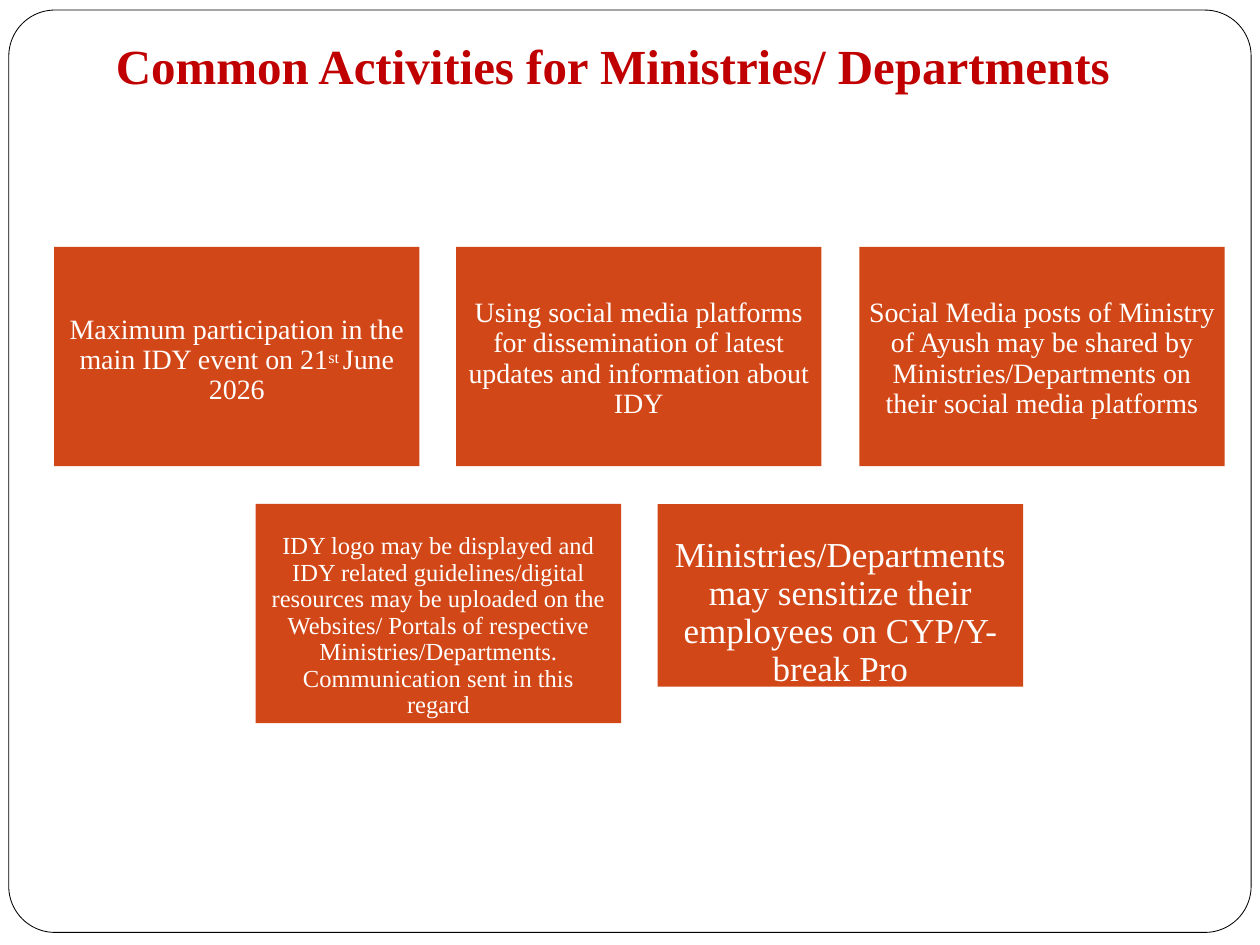
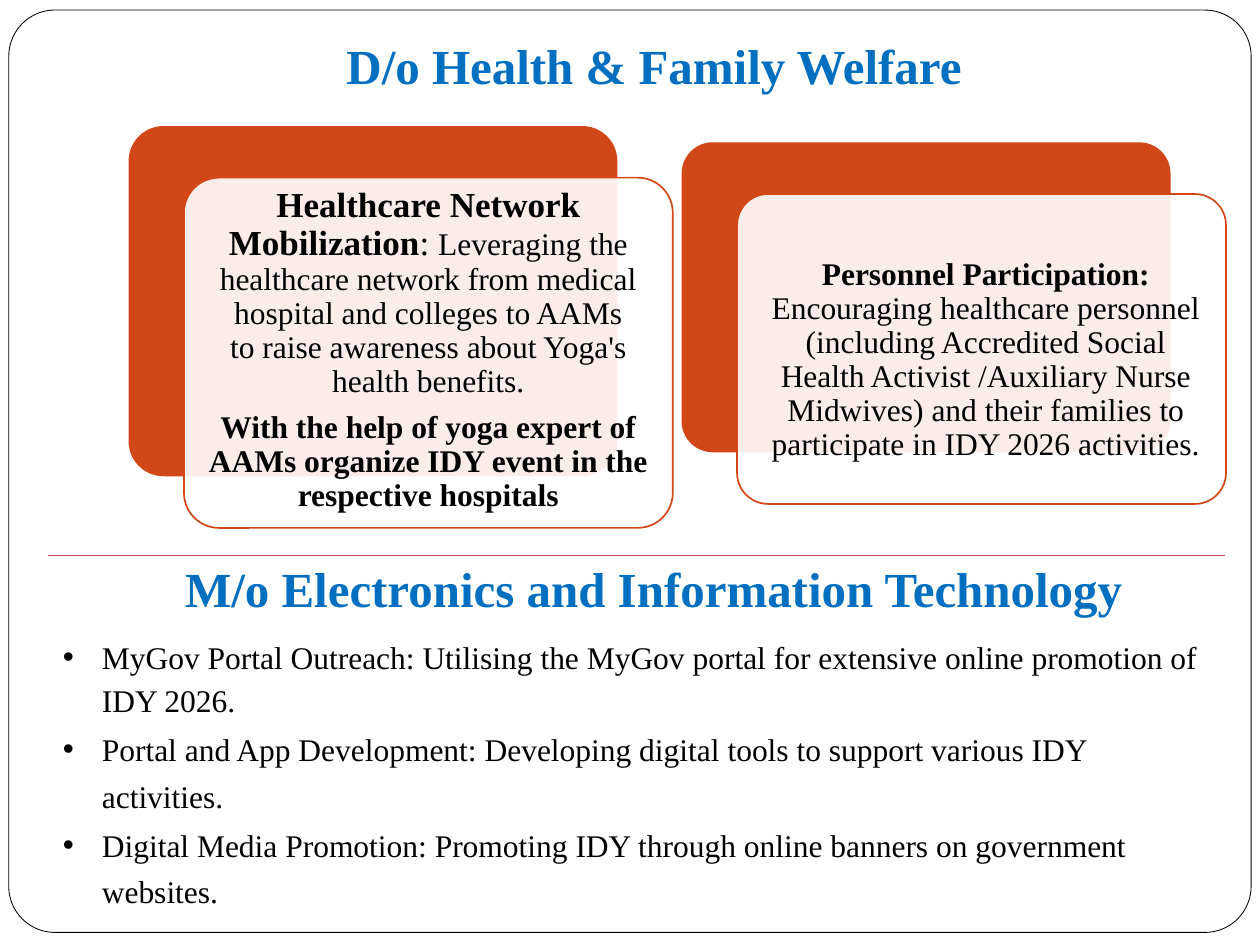
from lxml import etree
from pptx import Presentation
from pptx import util as u
from pptx.dml.color import RGBColor
from pptx.enum import shapes, text
from pptx.oxml.ns import qn

EMU_PER_PX = 9144  # 100 px to the inch
FONT = "Times New Roman"
COLORS = {
    "frame": "000000",
    "body": "000000",
    "white": "FFFFFF",
    "card": "D24717",
    "common": "C00000",
    "ministry": "006FC0",
    "divider": "BF4C48",
}
SHAPE = shapes.MSO_SHAPE
CENTER = text.PP_ALIGN.CENTER
MIDDLE = text.MSO_ANCHOR.MIDDLE


def px(*lengths):
    return [u.Emu(length * EMU_PER_PX) for length in lengths]


def color(name):
    return RGBColor.from_string(COLORS[name])


def write(frame, paragraphs, size=18, ink="body", bold=False, align=None, anchor=None,
          insets=(0, 0, 0, 0), leading=None, before=0, bullet=None):
    """Fill a text frame; a paragraph is a string or a list of (string, run format) pairs.

    leading is a line spacing, or a list with one for each paragraph.
    """
    frame.word_wrap = True
    frame.vertical_anchor = anchor or text.MSO_ANCHOR.TOP
    (frame.margin_left, frame.margin_top,
     frame.margin_right, frame.margin_bottom) = px(*insets)
    for index, runs in enumerate(paragraphs):
        paragraph = frame.paragraphs[0] if index == 0 else frame.add_paragraph()
        if bullet:
            add_bullet(paragraph, bullet)
        paragraph.alignment = align or text.PP_ALIGN.LEFT
        paragraph.line_spacing = leading[index] if isinstance(leading, list) else leading
        if index:
            paragraph.space_before = u.Pt(before)
        for words, style in [(runs, {})] if isinstance(runs, str) else runs:
            for part, line in enumerate(words.split("\v")):
                if part:
                    paragraph.add_line_break()
                run = paragraph.add_run()
                run.text = line
                run.font.name = FONT
                run.font.size = u.Pt(style.get("size", size))
                run.font.bold = style.get("bold", bold)
                run.font.color.rgb = color(ink)
                if "raised" in style:
                    run.font._element.set("baseline", str(style["raised"] * 1000))


def add_bullet(paragraph, mark):
    properties = paragraph._p.get_or_add_pPr()
    hanging, = px(31)
    indent, = px(33)
    properties.set("marL", str(indent))
    properties.set("indent", str(-hanging))
    etree.SubElement(properties, qn("a:buFont")).set("typeface", "Arial")
    etree.SubElement(properties, qn("a:buChar")).set("char", mark)


class Deck:
    def __init__(self):
        self.presentation = Presentation()
        self.presentation.slide_width, self.presentation.slide_height = px(1000, 750)
        self.slide = None

    def new_slide(self):
        self.slide = self.presentation.slides.add_slide(self.presentation.slide_layouts[6])
        self.panel(7, 8, 986, 732, line="frame", weight=0.48, corner=0.05)

    def panel(self, x, y, width, height, fill=None, line=None, weight=1, corner=0, opacity=100):
        kind = SHAPE.ROUNDED_RECTANGLE if corner else SHAPE.RECTANGLE
        panel = self.slide.shapes.add_shape(kind, *px(x, y, width, height))
        panel.shadow.inherit = False
        if corner:
            panel.adjustments[0] = corner
        if fill:
            panel.fill.solid()
            panel.fill.fore_color.rgb = color(fill)
            if opacity < 100:
                tint = panel._element.spPr.find(qn("a:solidFill"))[0]
                etree.SubElement(tint, qn("a:alpha")).set("val", str(opacity * 1000))
        else:
            panel.fill.background()
        if line:
            panel.line.color.rgb = color(line)
            panel.line.width = u.Pt(weight)
        else:
            panel.line.fill.background()
        return panel

    def text(self, x, y, width, height, paragraphs, **style):
        box = self.slide.shapes.add_textbox(*px(x, y, width, height))
        write(box.text_frame, paragraphs, **style)

    def title(self, x, y, words, ink):
        self.text(x, y, 820, 50, [words], size=28, ink=ink, bold=True)

    def card(self, x, y, width, height, paragraphs, size, drop):
        """Filled box whose middle text is pushed down by a top inset of drop px."""
        card = self.panel(x, y, width, height, fill="card")
        write(card.text_frame, paragraphs, size=size, ink="white", align=CENTER,
              anchor=MIDDLE, insets=(6, drop, 6, 0), leading=0.9)

    def layered_card(self, x, y, width, height):
        """Filled card with a see-through white card set off to the lower right."""
        self.panel(x, y, width, height, fill="card", corner=0.1)
        self.panel(x + 44, y + 41, width, height, fill="white", line="card",
                   weight=0.96, corner=0.1, opacity=90)

    def divider(self, x1, x2, y):
        rule = self.slide.shapes.add_connector(shapes.MSO_CONNECTOR.STRAIGHT, *px(x1, y, x2, y))
        rule.line.color.rgb = color("divider")
        rule.line.width = u.Pt(0.75)
        etree.SubElement(rule._element.spPr, qn("a:effectLst"))


def common_activities(deck):
    deck.new_slide()
    deck.title(92, 28, "Common Activities for Ministries/ Departments", "common")
    width, height, gap = 290, 174, 29.5
    # Each activity: paragraphs, text size, top inset, card height
    rows = [
        (43, 196, [
            ([[("Maximum participation in the main IDY event on 21", {}),
               ("st ", {"size": 15.8, "raised": 21}), ("June 2026", {})]], 16, 6, height),
            (["Using social media platforms for dissemination of latest updates and "
              "information about IDY"], 16, 4, height),
            (["Social Media posts of Ministry of Ayush may be shared by "
              "Ministries/Departments on their social media platforms"], 16, 4, height),
        ]),
        (203, 400, [
            (["IDY logo may be displayed and IDY related guidelines/digital resources may "
              "be uploaded on the Websites/ Portals of respective Ministries/Departments.",
              "Communication sent in this\vregard"], 14, 20, height),
            (["Ministries/Departments may sensitize their employees on CYP/Y-break Pro"],
             20, 28, 145),
        ]),
    ]
    for left, top, activities in rows:
        for column, (paragraphs, size, drop, card_height) in enumerate(activities):
            x = int(left + column * (width + gap))
            deck.card(x, top, width, card_height, paragraphs, size, drop)


def health_and_electronics(deck):
    deck.new_slide()
    deck.title(275, 28, "D/o Health & Family Welfare", "ministry")
    passage = dict(align=CENTER, anchor=MIDDLE, leading=0.9, before=7)
    strong, large = {"bold": True}, {"size": 20}

    deck.layered_card(102, 100, 388, 278)
    deck.text(160, 149, 360, 258, [
        [("Healthcare Network Mobilization", {**strong, **large}), (": ", large),
         ("Leveraging the healthcare network from medical hospital and colleges to AAMs\v"
          "to raise awareness about Yoga's health benefits.", {})],
        [("With the help of yoga expert of AAMs organize IDY event in the "
          "respective hospitals", strong)],
    ], **passage)

    deck.layered_card(541, 113, 388, 246)
    deck.text(611, 204, 343, 164, [
        [("Personnel Participation: ", strong),
         ("Encouraging healthcare personnel (including Accredited Social Health Activist "
          "/Auxiliary Nurse Midwives) and their families to participate in IDY 2026 "
          "activities.", {})],
    ], **passage)

    deck.title(147, 443, "M/o Electronics and Information Technology", "ministry")
    deck.divider(38, 972, 441)
    deck.text(38, 497, 931, 231, [
        "MyGov Portal Outreach: Utilising the MyGov portal for extensive online promotion "
        "of IDY 2026.",
        "Portal and App Development: Developing digital tools to support various IDY "
        "activities.",
        "Digital Media Promotion: Promoting IDY through online banners on government "
        "websites.",
    ], insets=(10, 5, 10, 5), bullet="•", before=1,
        leading=[u.Pt(24.8), u.Pt(26.8), u.Pt(26.8)])


def main():
    deck = Deck()
    common_activities(deck)
    health_and_electronics(deck)
    deck.presentation.save("out.pptx")


if __name__ == "__main__":
    main()
